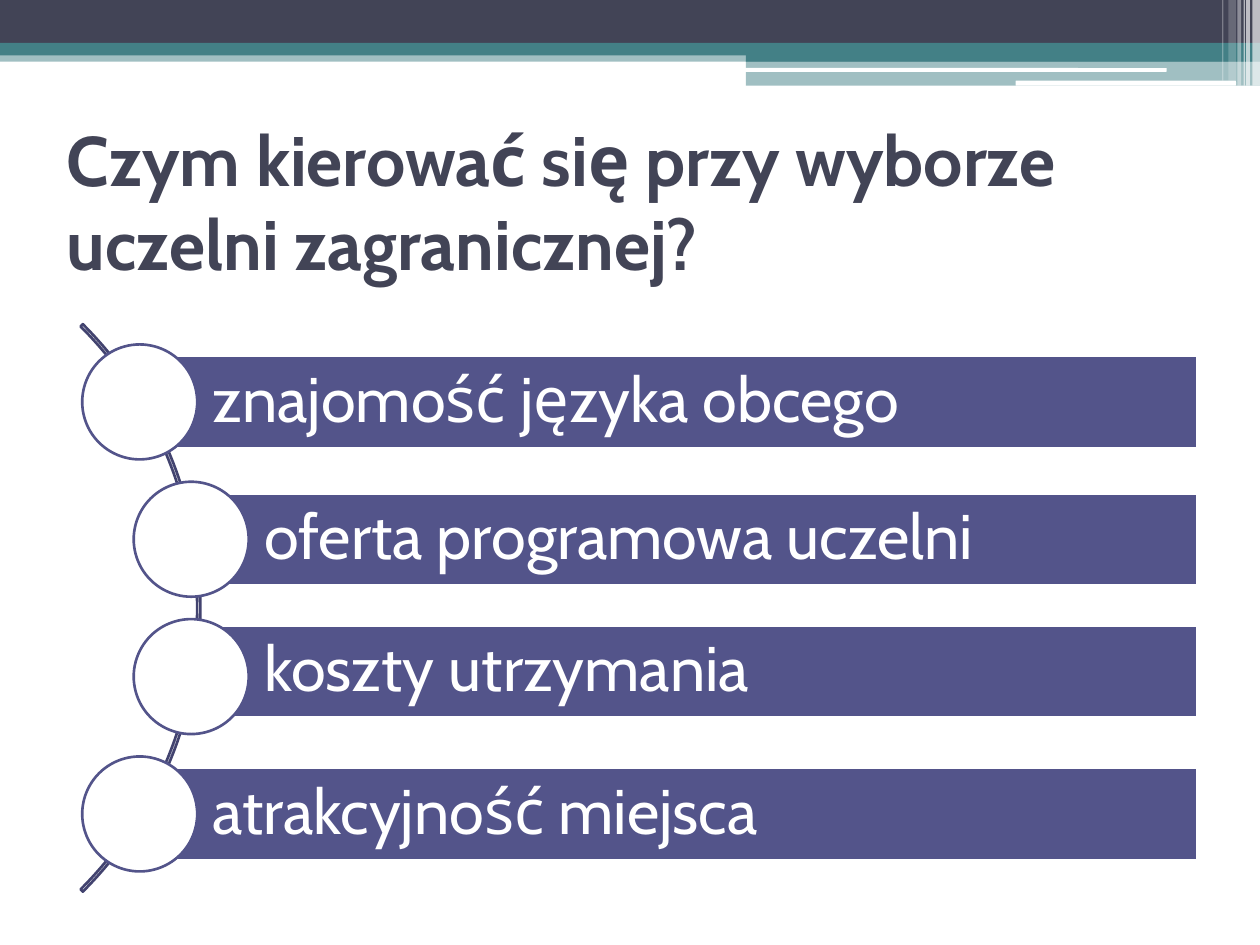
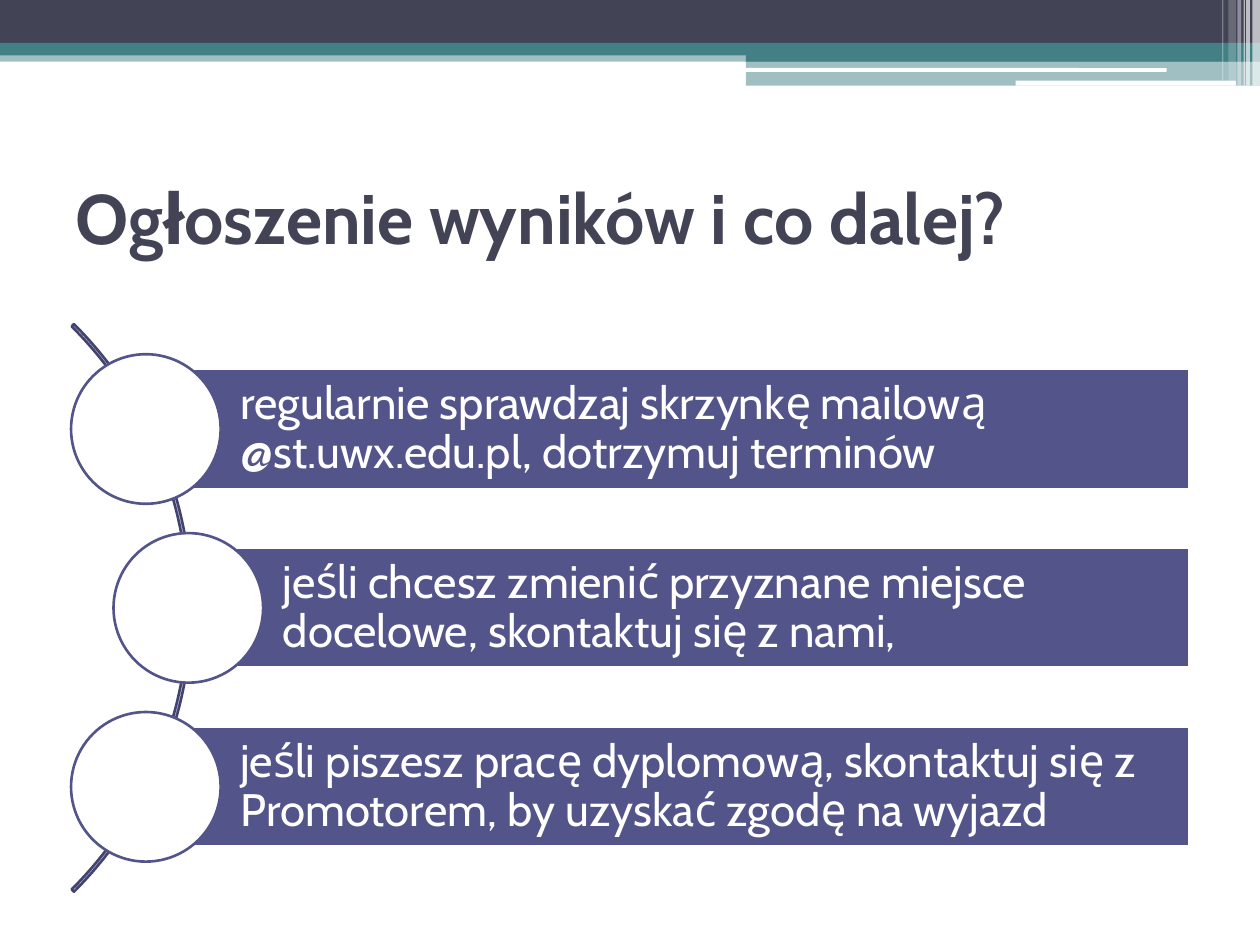
from dataclasses import dataclass
from math import sqrt
from typing import NamedTuple

from lxml import etree
from pptx import Presentation
from pptx.dml.color import RGBColor
from pptx.enum.shapes import MSO_SHAPE as Shape
from pptx.enum.text import MSO_ANCHOR as Anchor, MSO_AUTO_SIZE as AutoSize, PP_ALIGN as Align
from pptx.oxml.ns import qn
from pptx.util import Inches, Pt


# Colours and type sizes
@dataclass(frozen=True)
class Theme:
    font: str = "Cabin"
    white: str = "FFFFFF"
    navy: str = "424456"
    teal: str = "438086"
    violet: str = "53548A"
    arc: str = "42436F"
    title_size: int = 40
    line_width: float = 1.5


THEME = Theme()


class Box(NamedTuple):
    left: float
    top: float
    width: float
    height: float


class Band(NamedTuple):
    box: Box
    color: str
    opacity: int = 100
    kind: Shape = Shape.RECTANGLE


class Row(NamedTuple):
    text: str
    shift: float = 0  # vertical nudge of the bar


@dataclass(frozen=True)
class ListPage:
    title: str
    title_box: Box
    rows: tuple[Row, ...]
    arc_left: float
    row_step: float
    bar_height: float
    bar_right: float
    text_indent: float
    text_inset: float
    text_size: int


# Geometry of the curved list
ARC_TOP, ARC_SIZE = 1.64, 6.37
ARC_ANGLES = (189, 27, 0.004)
BULLET_RADIUS = 3.16  # distance of the circles from the arc's centre
CIRCLE_RATIO = 1.25  # circle diameter to bar height

# Header bands, from back to front
HEADER = (
    Band(Box(0, 0.4, 10, 0.09), THEME.teal, 50),
    Band(Box(0, 0, 10, 0.34), THEME.navy),
    Band(Box(0, 0.34, 10, 0.1), THEME.teal),
    Band(Box(5.92, 0.39, 4.08, 0.1), THEME.teal),
    Band(Box(5.92, 0.48, 4.08, 0.2), THEME.teal, 50),
    Band(Box(5.91, 0.54, 3.35, 0.03), THEME.white, kind=Shape.ROUNDED_RECTANGLE),
    Band(Box(8.06, 0.64, 1.75, 0.04), THEME.white, kind=Shape.ROUNDED_RECTANGLE),
    *(
        Band(Box(left, 0, width, height), THEME.white, opacity)
        for left, width, height, opacity in (
            (9.94, 0.06, 0.68, 65),
            (9.89, 0.03, 0.68, 65),
            (9.87, 0.01, 0.68, 60),
            (9.82, 0.03, 0.68, 40),
            (9.75, 0.06, 0.64, 20),
            (9.7, 0.01, 0.64, 30),
        )
    ),
)

PAGES = (
    ListPage(
        title="Czym kierować się przy wyborze uczelni zagranicznej?",
        title_box=Box(0.43, 0.76, 9.07, 1.66),
        rows=(
            Row("znajomość języka obcego"),
            Row("oferta programowa uczelni"),
            Row("koszty utrzymania", shift=-0.04),
            Row("atrakcyjność miejsca"),
        ),
        arc_left=-4.78, row_step=1.09, bar_height=0.73, bar_right=9.5,
        text_indent=0.58, text_inset=0.1, text_size=36,
    ),
    ListPage(
        title="Ogłoszenie wyników i co dalej?",
        title_box=Box(0.5, 1.25, 9, 0.93),
        rows=(
            Row("regularnie sprawdzaj skrzynkę mailową @st.uwx.edu.pl, dotrzymuj terminów"),
            Row("jeśli chcesz zmienić przyznane miejsce docelowe, skontaktuj się z nami,"),
            Row("jeśli piszesz pracę dyplomową, skontaktuj się z Promotorem, "
                "by uzyskać zgodę na wyjazd"),
        ),
        arc_left=-4.85, row_step=1.42, bar_height=0.95, bar_right=9.44,
        text_indent=0.75, text_inset=0.07, text_size=26,
    ),
)


def set_all(target, values: dict) -> None:
    for name, value in values.items():
        setattr(target, name, value)


def place(shape, box: Box) -> None:
    set_all(shape, {side: Inches(value) for side, value in box._asdict().items()})


def add_figure(page, kind: Shape, box: Box, fill: str | None = None, line: str | None = None):
    shape = page.shapes.add_shape(kind, *map(Inches, box))
    shape.shadow.inherit = False
    if fill:
        shape.fill.solid()
        shape.fill.fore_color.rgb = RGBColor.from_string(fill)
    else:
        shape.fill.background()
    if line:
        shape.line.color.rgb = RGBColor.from_string(line)
        shape.line.width = Pt(THEME.line_width)
    else:
        shape.line.fill.background()
    return shape


def write(shape, text: str, size: int, color: str, bold: bool, insets: Box | None = None,
          spacing: float = 1.0) -> None:
    frame = shape.text_frame
    set_all(frame, {"word_wrap": True, "auto_size": AutoSize.NONE,
                    "vertical_anchor": Anchor.MIDDLE})
    if insets:
        left, top, right, bottom = map(Inches, insets)
        set_all(frame, {"margin_left": left, "margin_top": top,
                        "margin_right": right, "margin_bottom": bottom})
    para = frame.paragraphs[0]
    set_all(para, {"alignment": Align.LEFT, "line_spacing": spacing})
    span = para.add_run()
    span.text = text
    set_all(span.font, {"name": THEME.font, "size": Pt(size), "bold": bold})
    span.font.color.rgb = RGBColor.from_string(color)


def add_header(page) -> None:
    for band in HEADER:
        shape = add_figure(page, band.kind, band.box, band.color)
        if band.opacity < 100:
            color = shape.fill._xPr.find(f".//{qn('a:srgbClr')}")
            etree.SubElement(color, qn("a:alpha"), val=str(band.opacity * 1000))


def add_curved_list(page, content: ListPage) -> None:
    arc_box = Box(content.arc_left, ARC_TOP, ARC_SIZE, ARC_SIZE)
    arc = add_figure(page, Shape.BLOCK_ARC, arc_box, line=THEME.arc)
    for index, value in enumerate(ARC_ANGLES):
        arc.adjustments[index] = value

    center_x = content.arc_left + ARC_SIZE / 2
    center_y = ARC_TOP + ARC_SIZE / 2
    height = content.bar_height
    diameter = height * CIRCLE_RATIO
    inset = content.text_inset
    insets = Box(content.text_indent, inset, inset, inset)
    for index, row in enumerate(content.rows):
        # Rows are spread evenly about the arc's centre
        offset = (index - (len(content.rows) - 1) / 2) * content.row_step
        x = center_x + sqrt(BULLET_RADIUS**2 - offset**2)
        y = center_y + offset
        bar_box = Box(x, y - height / 2 + row.shift, content.bar_right - x, height)
        bar = add_figure(page, Shape.RECTANGLE, bar_box, THEME.violet, THEME.white)
        write(bar, row.text, content.text_size, THEME.white, False, insets, 0.9)
        circle_box = Box(x - diameter / 2, y - diameter / 2, diameter, diameter)
        add_figure(page, Shape.OVAL, circle_box, THEME.white, THEME.violet)


def add_page(deck, content: ListPage) -> None:
    page = deck.slides.add_slide(deck.slide_layouts.get_by_name("Title Only"))
    add_header(page)
    title = page.shapes.title
    place(title, content.title_box)
    write(title, content.title, THEME.title_size, THEME.navy, True)
    add_curved_list(page, content)


def main() -> None:
    deck = Presentation()
    set_all(deck, {"slide_width": Inches(10), "slide_height": Inches(7.5)})
    for content in PAGES:
        add_page(deck, content)
    deck.save("out.pptx")


if __name__ == "__main__":
    main()
